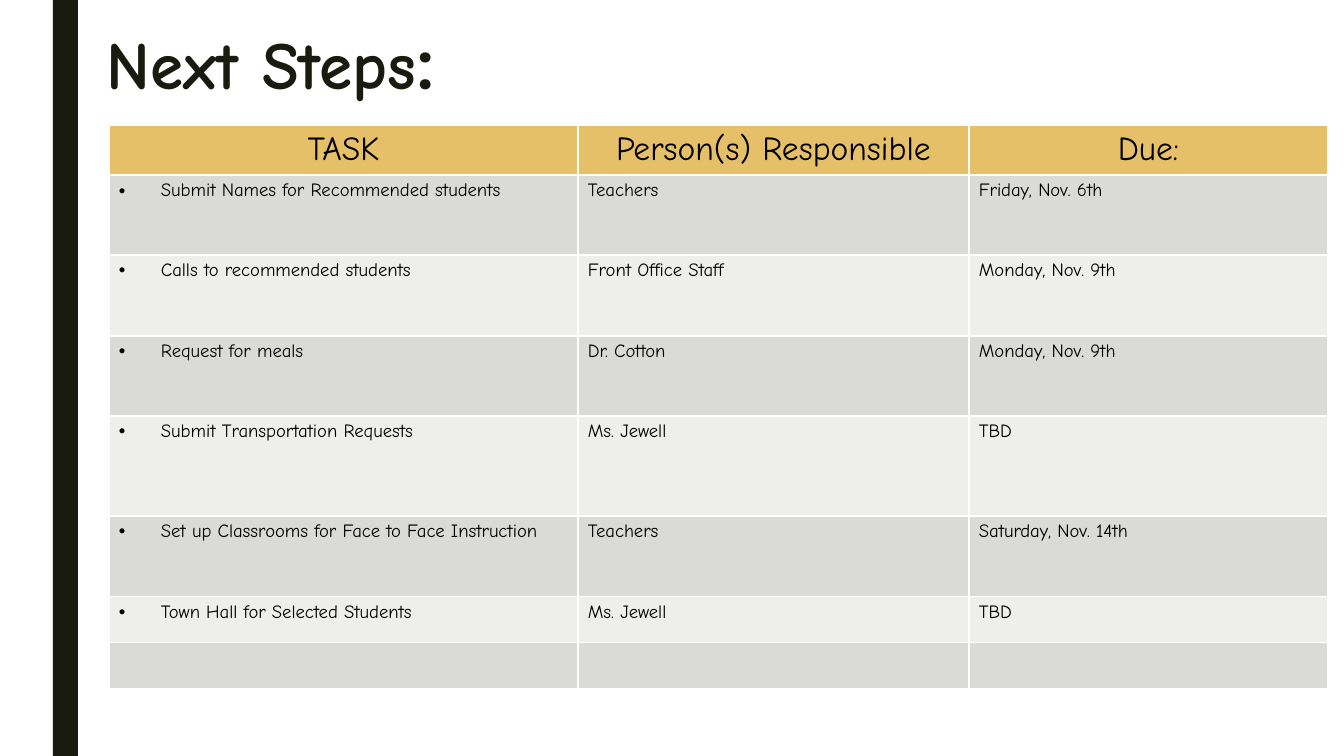
from lxml.etree import SubElement
from pptx import Presentation
from pptx.dml.color import RGBColor
from pptx.enum.shapes import MSO_SHAPE as Shape
from pptx.enum.text import MSO_ANCHOR as Anchor, MSO_AUTO_SIZE as AutoSize, PP_ALIGN as Align
from pptx.oxml.ns import qn
from pptx.util import Pt

PX = 914400 / 134.4
HEADINGS = ["TASK", "Person(s) Responsible", "Due:"]
TASKS = [
    ["Submit Names for Recommended students", "Teachers", "Friday, Nov. 6th"],
    ["Calls to recommended students", "Front Office Staff", "Monday, Nov. 9th"],
    ["Request for meals", "Dr. Cotton", "Monday, Nov. 9th"],
    ["Submit Transportation Requests", "Ms. Jewell", "TBD"],
    ["Set up Classrooms for Face to Face Instruction", "Teachers", "Saturday, Nov. 14th"],
    ["Town Hall for Selected Students", "Ms. Jewell", "TBD"],
    ["", "", ""],
]
COLUMN_WIDTHS = [469, 391, 359]
ROW_HEIGHTS = [50, 80, 81, 80, 100, 81, 46, 46]


def px(length):
    return round(length * PX)


def color(value):
    return RGBColor.from_string(value)


class SlideBuilder:
    font = "Comic Neue"
    dark = "191B0E"
    text = "000000"
    header = "E6C069"
    bands = ["DADBD9", "EEEEED"]
    border = "FFFFFF"

    def __init__(self, page):
        self.page = page

    def bar(self, left, top, width, height):
        bar = self.page.shapes.add_shape(
            Shape.RECTANGLE, px(left), px(top), px(width), px(height))
        bar.shadow.inherit = False
        bar.fill.solid()
        bar.fill.fore_color.rgb = color(self.dark)
        bar.line.fill.background()

    def title(self, left, top, width, height, spans):
        title = self.page.shapes.title
        title.left, title.top = px(left), px(top)
        title.width, title.height = px(width), px(height)
        frame = title.text_frame
        frame.word_wrap = True
        frame.auto_size = AutoSize.NONE
        frame.vertical_anchor = Anchor.TOP
        para = frame.paragraphs[0]
        para.alignment = Align.LEFT
        para.line_spacing = 0.89
        para.font.size = Pt(36)
        para.font.bold = True
        para.font.color.rgb = color(self.dark)
        for words, font in spans:
            span = para.add_run()
            span.text = words
            span.font.name = font

    def table(self, left, top, widths, heights, rows):
        table = self.page.shapes.add_table(
            len(rows), len(widths), px(left), px(top),
            px(sum(widths)), px(sum(heights))).table
        table.first_row = table.horz_banding = False
        for column, width in zip(table.columns, widths):
            column.width = px(width)
        for row, height in zip(table.rows, heights):
            row.height = px(height)
        for r, texts in enumerate(rows):
            for c, words in enumerate(texts):
                cell = table.cell(r, c)
                if r == 0:
                    self.cell(cell, words, self.header, 18, Align.CENTER)
                else:
                    self.cell(cell, words, self.bands[(r - 1) % 2], 10,
                              Align.LEFT, bullet=c == 0 and words != "")

    def cell(self, cell, words, fill, size, align, bullet=False):
        cell.margin_left = cell.margin_right = px(10)
        cell.margin_top = cell.margin_bottom = px(5)
        self.borders(cell)
        cell.fill.solid()
        cell.fill.fore_color.rgb = color(fill)
        para = cell.text_frame.paragraphs[0]
        para.alignment = align
        if bullet:
            self.bullet(para)
        para.font.name = self.font
        para.font.size = Pt(size)
        para.font.color.rgb = color(self.text)
        if words:
            para.add_run().text = words
        else:
            SubElement(para._p, qn("a:endParaRPr"), sz=str(size * 100))

    def borders(self, cell):
        properties = cell._tc.get_or_add_tcPr()
        for side in ("L", "R", "T", "B"):
            line = SubElement(properties, qn(f"a:ln{side}"), w=str(Pt(1)))
            fill = SubElement(line, qn("a:solidFill"))
            SubElement(fill, qn("a:srgbClr"), val=self.border)

    def bullet(self, para):
        properties = para._p.get_or_add_pPr()
        properties.set("marL", str(px(42)))
        properties.set("indent", str(-px(42)))
        fill = SubElement(properties, qn("a:buClr"))
        SubElement(fill, qn("a:srgbClr"), val=self.text)
        SubElement(properties, qn("a:buFont"), typeface="Arial")
        SubElement(properties, qn("a:buChar"), char="•")


def main():
    deck = Presentation()
    deck.slide_width, deck.slide_height = px(1344), px(756)
    page = deck.slides.add_slide(deck.slide_layouts[5])
    builder = SlideBuilder(page)
    builder.bar(53, 0, 25, 756)
    builder.title(93, 25, 1059, 74, [("Next Steps", "Comic Neue"), (":", "Roboto")])
    builder.table(109, 125, COLUMN_WIDTHS, ROW_HEIGHTS, [HEADINGS] + TASKS)
    deck.save("out.pptx")


if __name__ == "__main__":
    main()
